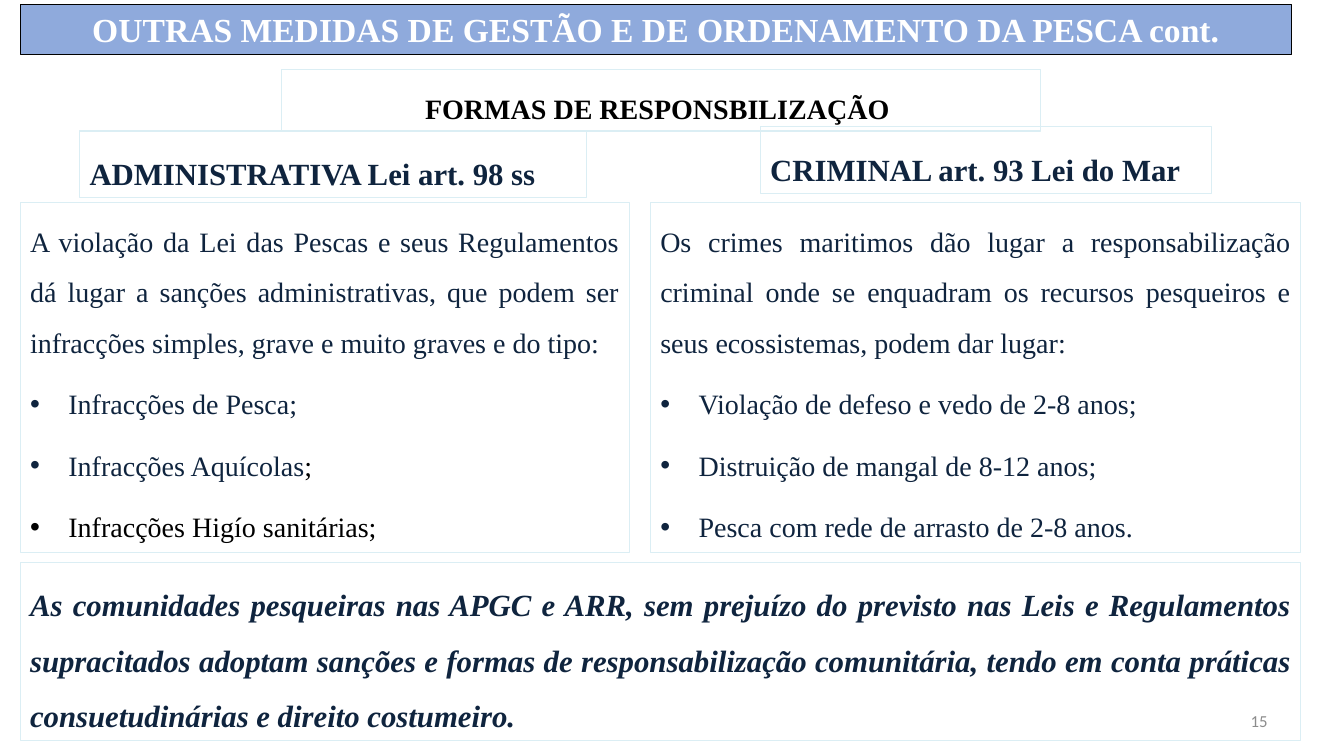
from lxml import etree
from pptx import Presentation
from pptx import util as u
from pptx.dml.color import RGBColor
from pptx.enum import shapes, text
from pptx.oxml.ns import qn

NAVY = RGBColor(0x0F, 0x24, 0x3E)
BLACK = RGBColor(0, 0, 0)
WHITE = RGBColor(0xFF, 0xFF, 0xFF)
GREY = RGBColor(0x8C, 0x8C, 0x8C)
BAND = RGBColor(0x8F, 0xAA, 0xDC)
PALE = RGBColor(0xDB, 0xEE, 0xF4)
SERIF = "Times New Roman"
LEFT, CENTER, JUSTIFY = (text.PP_ALIGN.LEFT, text.PP_ALIGN.CENTER,
                         text.PP_ALIGN.JUSTIFY)

# Content: a paragraph is a list of (words, colour) runs
TITLE = "OUTRAS MEDIDAS DE GESTÃO E DE ORDENAMENTO DA PESCA cont."
SUBJECT = "FORMAS DE RESPONSBILIZAÇÃO "
ADMINISTRATIVE = {
    "heading": "ADMINISTRATIVA Lei art. 98 ss",
    "intro": "A violação da Lei das Pescas e seus Regulamentos dá lugar a sanções "
             "administrativas, que podem ser infracções simples, grave e muito "
             "graves e do tipo:",
    "items": [[("Infracções de Pesca;", NAVY)],
              [("Infracções Aquícolas", NAVY), (";", BLACK)],
              [("Infracções Higío sanitárias;", BLACK)]],
}
CRIMINAL = {
    "heading": "CRIMINAL art. 93 Lei do Mar",
    "intro": "Os crimes maritimos dão lugar a responsabilização criminal onde se "
             "enquadram os recursos pesqueiros e seus ecossistemas, podem dar lugar:",
    "items": [[("Violação de defeso e vedo de 2-8 anos;", NAVY)],
              [("Distruição de mangal de 8-12 anos;", NAVY)],
              [("Pesca com rede de arrasto de 2-8 anos.", NAVY)]],
}
COMMUNITY = ("As comunidades pesqueiras nas APGC e ARR, sem prejuízo do previsto nas "
             "Leis e Regulamentos supracitados adoptam sanções e formas de "
             "responsabilização comunitária, tendo em conta práticas "
             "consuetudinárias e direito costumeiro.")
PAGE = "15"

# Layout, in inches
WIDTH, HEIGHT = 13.33, 7.5
MARGIN, RIGHT, GUTTER = 0.2, 12.9, 0.21
BODY_TOP, BODY_HEIGHT, ROW_GAP = 2.01, 3.47, 0.1
ADMIN_WIDTH = 6.04
CRIMINAL_LEFT = MARGIN + ADMIN_WIDTH + GUTTER
COMMUNITY_TOP = BODY_TOP + BODY_HEIGHT + ROW_GAP

deck = Presentation()
deck.slide_width, deck.slide_height = u.Inches(WIDTH), u.Inches(HEIGHT)
slide = deck.slides.add_slide(deck.slide_layouts[6])


def add_run(paragraph, words, size, color, font=SERIF, bold=False, italic=False):
    run = paragraph.add_run()
    run.text = words
    run.font.name, run.font.size = font, u.Pt(size)
    run.font.bold, run.font.italic = bold, italic
    run.font.color.rgb = color


def add_bullet(paragraph):
    props = paragraph._p.get_or_add_pPr()
    props.set("marL", str(u.Inches(0.38)))
    props.set("indent", str(-u.Inches(0.38)))
    etree.SubElement(props, qn("a:buFont")).set("typeface", "Arial")
    etree.SubElement(props, qn("a:buChar")).set("char", "•")


def add_box(place, paragraphs, size, align=JUSTIFY, fill=None, line=PALE,
            weight=0.75, spaced=True, **style):
    """Outlined box; every paragraph after the first is a bullet."""
    box = slide.shapes.add_shape(shapes.MSO_SHAPE.RECTANGLE,
                                 *(u.Inches(n) for n in place))
    box.shadow.inherit = False
    if fill is None:
        box.fill.background()
    else:
        box.fill.solid()
        box.fill.fore_color.rgb = fill
    box.line.color.rgb, box.line.width = line, u.Pt(weight)
    frame = box.text_frame
    frame.word_wrap = True
    frame.vertical_anchor = text.MSO_ANCHOR.TOP
    for index, runs in enumerate(paragraphs):
        paragraph = frame.add_paragraph() if index else frame.paragraphs[0]
        paragraph.alignment = align
        if spaced:
            paragraph.line_spacing, paragraph.space_after = 1.5, u.Pt(8)
        if index:
            add_bullet(paragraph)
        for words, color in runs:
            add_run(paragraph, words, size, color, **style)


# Page number
number = slide.shapes.add_textbox(*(u.Inches(n) for n in (9.56, 6.95, 3.11, 0.4)))
number.text_frame.word_wrap = True
number.text_frame.vertical_anchor = text.MSO_ANCHOR.MIDDLE
number.text_frame.paragraphs[0].alignment = text.PP_ALIGN.RIGHT
add_run(number.text_frame.paragraphs[0], PAGE, 12, GREY, font="Calibri")

# Title band and subject
add_box((MARGIN, 0.04, 12.61, 0.5), [[(TITLE, WHITE)]], 24, CENTER,
        fill=BAND, line=BLACK, weight=0.5, spaced=False, bold=True)
add_box((2.79, 0.69, 7.53, 0.61), [[(SUBJECT, BLACK)]], 20, CENTER, bold=True)

# Two kinds of liability: heading above body
for kind, heading_place, left, width in (
        (ADMINISTRATIVE, (0.79, 1.3, 5.03, 0.66), MARGIN, ADMIN_WIDTH),
        (CRIMINAL, (7.54, 1.26, 4.48, 0.66), CRIMINAL_LEFT, RIGHT - CRIMINAL_LEFT)):
    add_box(heading_place, [[(kind["heading"], NAVY)]], 22, bold=True)
    add_box((left, BODY_TOP, width, BODY_HEIGHT),
            [[(kind["intro"], NAVY)]] + kind["items"], 20)

# Community liability
add_box((MARGIN, COMMUNITY_TOP, RIGHT - MARGIN, 1.77), [[(COMMUNITY, NAVY)]], 22,
        bold=True, italic=True)

deck.save("out.pptx")
